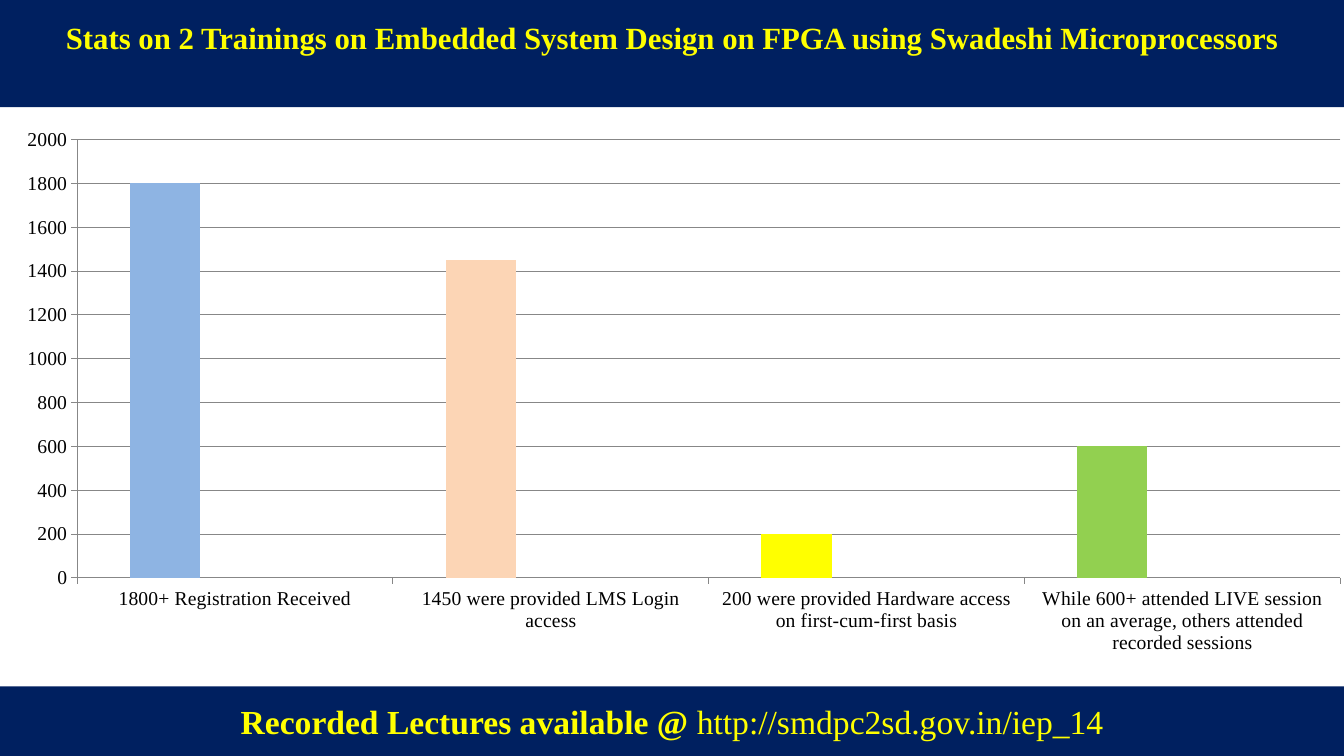
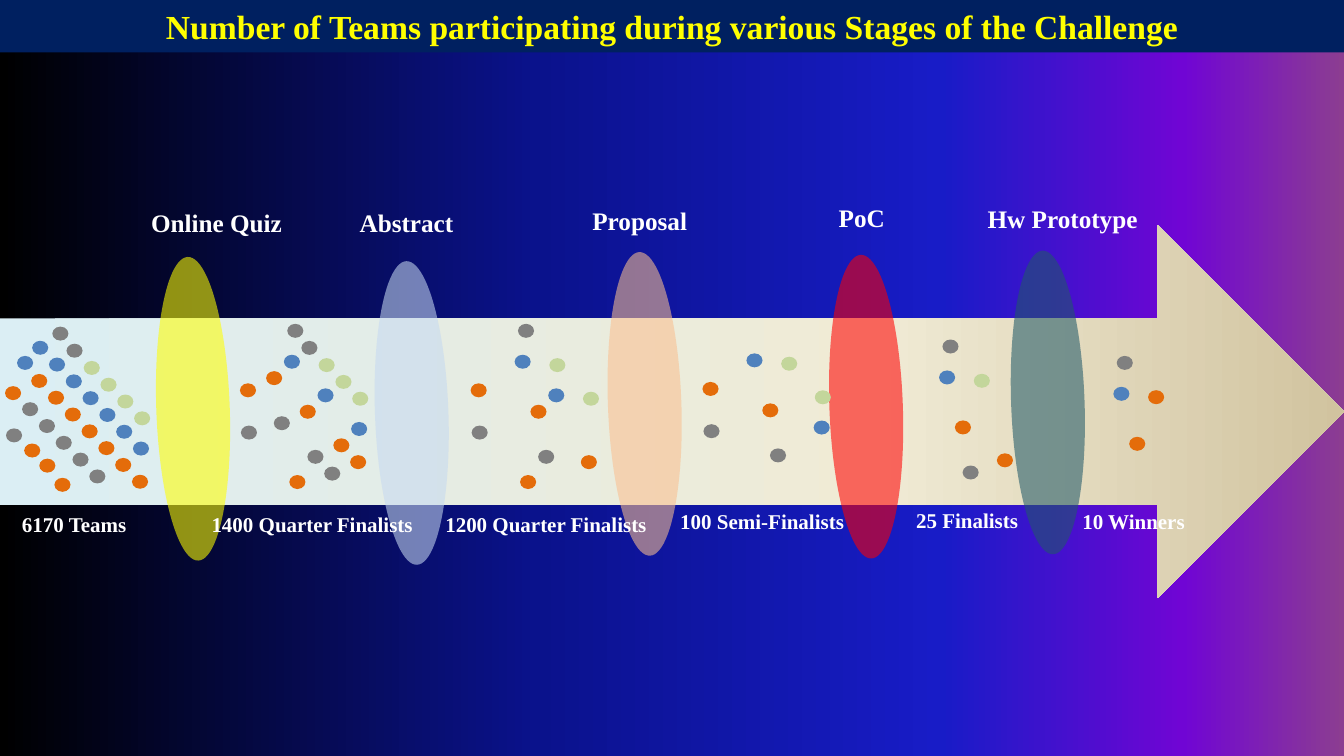
from dataclasses import dataclass

from lxml import etree
from pptx import Presentation
from pptx.chart.data import CategoryChartData
from pptx.dml.color import RGBColor
from pptx.enum import chart as ch, shapes, text
from pptx.oxml.ns import qn
from pptx.util import Pt


@dataclass(frozen=True)
class Theme:
    font: str = "Times New Roman"
    band: str = "002060"
    accent: str = "FFFF00"
    light: str = "FFFFFF"
    dark: str = "000000"
    rule: str = "878787"
    chart: int = 14
    team: int = 15
    stage: int = 18
    title: int = 22
    heading: int = 24
    lens_alpha: int = 57


T = Theme()
W, H = 960, 540

STATS_TITLE = "Stats on 2 Trainings on Embedded System Design on FPGA using Swadeshi Microprocessors"
LECTURES = [("Recorded Lectures available @ ", True), ("http://smdpc2sd.gov.in/iep_14", False)]
STATS = [
    ("1800+ Registration Received", 1800, "8EB4E3"),
    ("1450 were provided LMS Login access", 1450, "FCD5B5"),
    ("200 were provided Hardware access on first-cum-first basis", 200, "FFFF00"),
    ("While 600+ attended LIVE session on an average, others attended recorded sessions", 600, "92D050"),
]

TEAMS_TITLE = "Number of Teams participating during various Stages of the Challenge"
SKY = [(0, "000000"), (40, "0A128C"), (70, "181CC7"), (88, "7005D4"), (100, "8C3D91")]
SAND = [(0, "DBEEF4"), (65, "F0EBD5"), (100, "D1C39F")]
LENS_W, LENS_H, LENS_TILT = 52.5, 217, -2
LENSES = [
    ("Online Quiz", (100.8, 144.7), (137.9, 292), "FFFF00"),
    ("Abstract", (249.8, 144.7), (294.1, 295), "C6D9F1"),
    ("Proposal", (416, 143), (460.5, 288.5), "FAC090"),
    ("PoC", (592, 141), (618.7, 290.5), "FF0000"),
    ("Hw Prototype", (698.4, 142), (748.5, 287.5), "215968"),
]
TEAMS = [
    ("6170 Teams", 8.6, 362),
    ("1400 Quarter Finalists", 144, 362),
    ("1200 Quarter Finalists", 311, 362),
    ("100 Semi-Finalists", 478.8, 360),
    ("25 Finalists", 647.3, 359.3),
    ("10 Winners", 766, 360),
]
DOT_W, DOT_H, DOT_STEP = 11.5, 10, 12


def diagonal(x, y, count):
    return [(x + i * DOT_STEP, y + i * DOT_STEP) for i in range(count)]


SPOTS = {
    "4F81BD": diagonal(23, 243.4, 7) + [(12.2, 254.2)],
    "E46C0A": diagonal(22.3, 267.1, 7) + [
        (3.6, 275.8), (17.3, 316.8), (28.1, 327.6), (38.9, 341.3), (76.3, 314.6), (59.8, 257.8)],
    "808080": diagonal(15.8, 287.3, 5) + [(47.5, 245.5), (4.3, 306), (37.4, 233.3)],
    "C3D69B": diagonal(59.8, 257.8, 4),
}
CROWDS = [
    (0, 0, [range(8), range(11), range(8), range(4)]),
    (167.8, -2, [(1, 3, 5), (0, 2, 4, 5, 7, 10), (1, 3, 4, 5, 6, 7), (0, 1, 2)]),
    (332.6, -2, [(1, 3), (2, 5, 7, 10), (3, 6, 7), (0, 2)]),
    (498.2, -3, [(1, 5), (2, 7), (3, 6), (0, 2)]),
    (635.8, 9.2, [(1,), (2, 11), (3, 7), (0,)]),
    (760.3, 20.9, [(1,), (2, 12), (7,), ()]),
]


def rgb(value):
    return RGBColor.from_string(value)


def add_runs(p, parts, size, color):
    for words, bold in parts:
        r = p.add_run()
        r.text = words
        f = r.font
        f.name, f.size, f.bold = T.font, Pt(size), bold
        f.color.rgb = rgb(color)


def add_shape(s, kind, x, y, w, h, color=None):
    sp = s.shapes.add_shape(kind, Pt(x), Pt(y), Pt(w), Pt(h))
    sp.shadow.inherit = False
    sp.line.fill.background()
    if color:
        sp.fill.solid()
        sp.fill.fore_color.rgb = rgb(color)
    return sp


def add_band(s, y, h, parts, size, lift=0):
    sp = add_shape(s, shapes.MSO_SHAPE.RECTANGLE, 0, y, W, h, T.band)
    tf = sp.text_frame
    tf.word_wrap = True
    tf.vertical_anchor = text.MSO_ANCHOR.MIDDLE
    tf.margin_bottom = Pt(3.6 + lift)
    p = tf.paragraphs[0]
    p.alignment = text.PP_ALIGN.CENTER
    add_runs(p, parts, size, T.accent)


def add_label(s, words, x, y, size):
    tf = s.shapes.add_textbox(Pt(x), Pt(y), Pt(170), Pt(size * 1.6)).text_frame
    tf.word_wrap = True
    add_runs(tf.paragraphs[0], [(words, True)], size, T.light)


def set_gradient(fill, root, stops):
    fill.gradient()
    fill.gradient_angle = 0
    gs_list = next(root.iter(qn("a:gsLst")))
    for gs in list(gs_list):
        gs_list.remove(gs)
    for pos, color in stops:
        gs = etree.SubElement(gs_list, qn("a:gs"), pos=str(pos * 1000))
        etree.SubElement(gs, qn("a:srgbClr"), val=color)


def add_stats_chart(s):
    data = CategoryChartData()
    data.categories = [name for name, _, _ in STATS]
    data.add_series("Series 1", [value for _, value, _ in STATS])
    for name in ("Series 2", "Series 3"):
        data.add_series(name, [None] * len(STATS))
    frame = s.shapes.add_chart(
        ch.XL_CHART_TYPE.COLUMN_CLUSTERED, Pt(0), Pt(84), Pt(977), Pt(391), data)
    chart = frame.chart
    chart.has_legend = chart.has_title = False
    chart.font.name, chart.font.size = T.font, Pt(T.chart)
    chart.font.color.rgb = rgb(T.dark)
    plot = chart.plots[0]
    plot.gap_width, plot.overlap, plot.vary_by_categories = 150, 0, False
    for i, (_, _, color) in enumerate(STATS):
        fill = plot.series[0].points[i].format.fill
        fill.solid()
        fill.fore_color.rgb = rgb(color)
    val = chart.value_axis
    val.minimum_scale, val.maximum_scale, val.major_unit = 0, 2000, 200
    val.has_major_gridlines = True
    for axis in (val, chart.category_axis):
        axis.major_tick_mark = ch.XL_TICK_MARK.OUTSIDE
    for part in (val, chart.category_axis, val.major_gridlines):
        part.format.line.color.rgb = rgb(T.rule)
        part.format.line.width = Pt(0.75)


def add_lens(s, cx, cy, color):
    sp = add_shape(s, shapes.MSO_SHAPE.OVAL, cx - LENS_W / 2, cy - LENS_H / 2, LENS_W, LENS_H, color)
    sp.rotation = LENS_TILT
    clr = next(sp._element.spPr.iter(qn("a:srgbClr")))
    etree.SubElement(clr, qn("a:alpha"), val=str(T.lens_alpha * 1000))


def build_stats(s):
    add_band(s, 0, 76.5, [(STATS_TITLE, True)], T.title, lift=24)
    add_stats_chart(s)
    add_band(s, 490.3, H - 490.3, LECTURES, T.heading)


def build_funnel(s):
    set_gradient(s.background.fill, s._element, SKY)
    add_band(s, 0, 37.4, [(TEAMS_TITLE, True)], T.heading)
    arrow = add_shape(s, shapes.MSO_SHAPE.RIGHT_ARROW, 0, 160.8, W, 266.4)
    set_gradient(arrow.fill, arrow._element, SAND)
    for _, _, (cx, cy), color in LENSES:
        add_lens(s, cx, cy, color)
    for dx, dy, picks in CROWDS:
        for (color, spots), chosen in zip(SPOTS.items(), picks):
            for i in chosen:
                x, y = spots[i]
                add_shape(s, shapes.MSO_SHAPE.OVAL, x + dx, y + dy, DOT_W, DOT_H, color)
    for words, (x, y), _, _ in LENSES:
        add_label(s, words, x, y, T.stage)
    for words, x, y in TEAMS:
        add_label(s, words, x, y, T.team)


def main():
    prs = Presentation()
    prs.slide_width, prs.slide_height = Pt(W), Pt(H)
    for build in (build_stats, build_funnel):
        build(prs.slides.add_slide(prs.slide_layouts[6]))
    prs.save("out.pptx")


if __name__ == "__main__":
    main()
